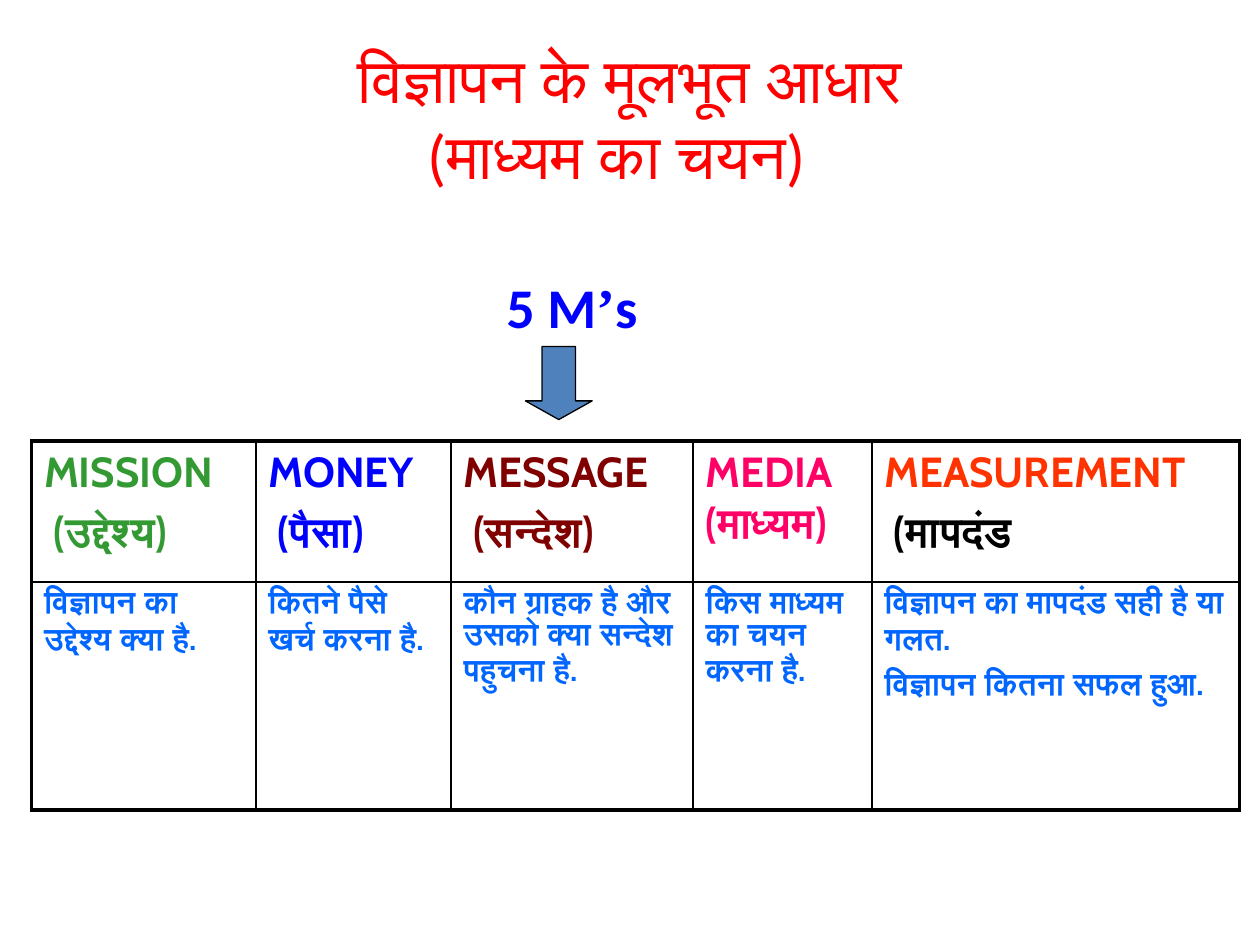
import lxml.etree
import pptx
import pptx.dml.color
import pptx.enum.shapes
import pptx.enum.text
import pptx.oxml.ns
import pptx.util

Inches = pptx.util.Inches
Pt = pptx.util.Pt
RGBColor = pptx.dml.color.RGBColor
PP_ALIGN = pptx.enum.text.PP_ALIGN
qn = pptx.oxml.ns.qn

RED = RGBColor(0xFF, 0x00, 0x00)
BLUE = RGBColor(0x00, 0x00, 0xFF)
GREEN = RGBColor(0x33, 0x99, 0x33)
MAROON = RGBColor(0x80, 0x00, 0x00)
PINK = RGBColor(0xFF, 0x00, 0x66)
ORANGE = RGBColor(0xFF, 0x33, 0x00)
BLACK = RGBColor(0x00, 0x00, 0x00)
SKY = RGBColor(0x00, 0x66, 0xFF)
STEEL = RGBColor(0x4F, 0x81, 0xBD)


def add_text(paragraph, text, color, **formats):
    run = paragraph.add_run()
    run.text = text
    run.font.color.rgb = color
    for name, value in formats.items():
        setattr(run.font, name, value)


def add_border(cell, side, width):
    line = lxml.etree.SubElement(
        cell._tc.get_or_add_tcPr(), qn(f"a:ln{side}"), w=str(Pt(width)))
    fill = lxml.etree.SubElement(line, qn("a:solidFill"))
    lxml.etree.SubElement(fill, qn("a:srgbClr"), val=str(BLACK))


presentation = pptx.Presentation()
presentation.slide_width = Inches(10)
presentation.slide_height = Inches(7.5)
slide = presentation.slides.add_slide(presentation.slide_layouts[6])

title = slide.shapes.add_textbox(Inches(0.5), Inches(0.3), Inches(9), Inches(1.25)).text_frame
title.word_wrap = True
title.vertical_anchor = pptx.enum.text.MSO_ANCHOR.MIDDLE
heading = title.paragraphs[0]
subheading = title.add_paragraph()
subheading._p.get_or_add_pPr().set("marR", str(Inches(0.22)))
for paragraph, text in ((heading, "विज्ञापन के मूलभूत आधार"), (subheading, "(माध्यम का चयन)")):
    paragraph.alignment = PP_ALIGN.CENTER
    add_text(paragraph, text, RED, size=Pt(36), name="Calibri")

columns = [
    (1.78, [("MISSION", GREEN), (" (उद्देश्य)", GREEN)],
     ["विज्ञापन का उद्देश्य क्या है."]),
    (1.55, [("MONEY", BLUE), (" (पैसा)", BLUE)],
     ["कितने पैसे खर्च करना है."]),
    (1.92, [("MESSAGE", MAROON), (" (सन्देश)", MAROON)],
     ["कौन ग्राहक है और उसको क्या सन्देश पहुचना है."]),
    (1.42, [("MEDIA (माध्यम)", PINK)],
     ["किस माध्यम का चयन करना है."]),
    (2.92, [("MEASUREMENT", ORANGE), (" (मापदंड", BLACK)],
     ["विज्ञापन का मापदंड सही है या गलत.", "विज्ञापन कितना सफल हुआ."]),
]
row_heights = [1.12, 1.81]
text_sizes = [24, 18]

five_ms = slide.shapes.add_table(
    len(row_heights), len(columns), Inches(0.25), Inches(3.5),
    Inches(9.58), Inches(sum(row_heights))).table
for flag, value in {"first_row": False, "horz_banding": False}.items():
    setattr(five_ms, flag, value)
for row, height in zip(five_ms.rows, row_heights):
    row.height = Inches(height)

for col, (width, names, questions) in enumerate(columns):
    five_ms.columns[col].width = Inches(width)
    contents = [names, [(question, SKY) for question in questions]]
    for row, (lines, size) in enumerate(zip(contents, text_sizes)):
        cell = five_ms.cell(row, col)
        outer_sides = {"L": col == 0, "R": col == len(columns) - 1, "T": row == 0, "B": row == 1}
        for side, outer in outer_sides.items():
            add_border(cell, side, 2.25 if outer else 1)
        cell.fill.background()
        for index, (text, color) in enumerate(lines):
            frame = cell.text_frame
            paragraph = frame.add_paragraph() if index else frame.paragraphs[0]
            paragraph.space_before = Pt(size * 0.2)
            add_text(paragraph, text, color, size=Pt(size), name="Cabin", bold=True)

label = slide.shapes.add_textbox(Inches(3.92), Inches(2.17), Inches(1.39), Inches(0.58)).text_frame
label.word_wrap = False
label.auto_size = pptx.enum.text.MSO_AUTO_SIZE.SHAPE_TO_FIT_TEXT
label.paragraphs[0].line_spacing = 0.9
label.paragraphs[0].space_before = Pt(6.4)
for text, font in (("5 M", "Calibri"), ("’", "Times New Roman"), ("s", "Calibri")):
    add_text(label.paragraphs[0], text, BLUE, size=Pt(32), name=font, bold=True)

arrow = slide.shapes.add_shape(
    pptx.enum.shapes.MSO_SHAPE.DOWN_ARROW, Inches(4.17), Inches(2.75), Inches(0.53), Inches(0.58))
arrow.adjustments[0] = 0.5
arrow.adjustments[1] = 0.28
arrow.shadow.inherit = False
arrow.fill.solid()
arrow.fill.fore_color.rgb = STEEL
arrow.line.color.rgb = BLACK
arrow.line.width = Pt(0.75)

presentation.save("out.pptx")
